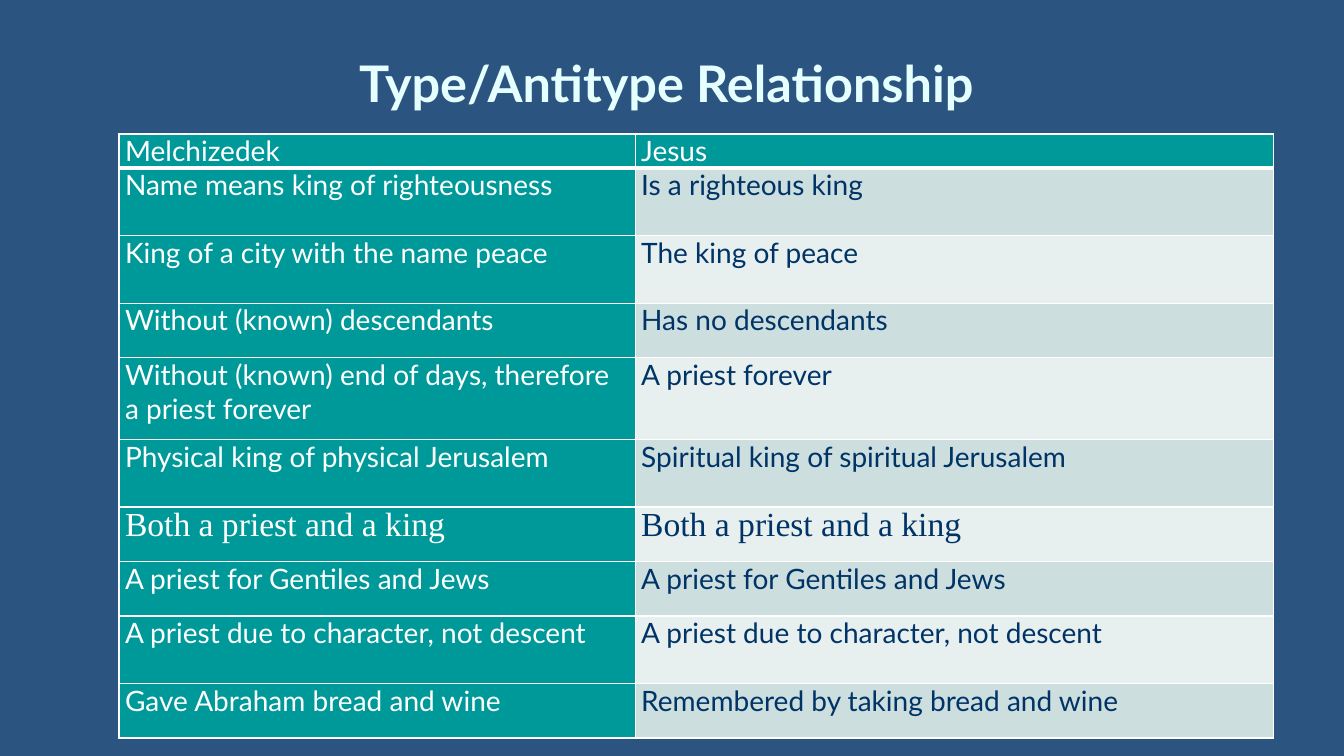
from lxml import etree
from pptx import Presentation
from pptx import util as u
from pptx.dml.color import RGBColor
from pptx.enum import text
from pptx.oxml.ns import qn

SLIDE_W, SLIDE_H = 13.33, 7.5
NAVY, ICE, WHITE = "2B5481", "E5FFFF", "FFFFFF"
TEAL, INK = "009999", "003366"
BANDS = ("CCDEDE", "E7EFEF")
COLUMN_WIDTHS = (5.12, 6.33)
SERIF = {"font": "Times New Roman", "size": 24}

# Melchizedek, Jesus, row height, text format
COMPARISONS = [
    ("Melchizedek", "Jesus", 0.33, {}),
    ("Name means king of righteousness", "Is a righteous king", 0.67, {}),
    ("King of a city with the name peace", "The king of peace", 0.67, {}),
    ("Without (known) descendants", "Has no descendants", 0.54, {}),
    ("Without (known) end of days, therefore a priest forever",
     "A priest forever", 0.81, {}),
    ("Physical king of physical Jerusalem",
     "Spiritual king of spiritual Jerusalem", 0.67, {}),
    ("Both a priest and a king", "Both a priest and a king", 0.54, SERIF),
    ("A priest for Gentiles and Jews", "A priest for Gentiles and Jews", 0.54, {}),
    ("A priest due to character, not descent",
     "A priest due to character, not descent", 0.67, {}),
    ("Gave Abraham bread and wine",
     "Remembered by taking bread and wine", 0.54, {}),
]


def paint(target, color):
    """Give a fill a solid colour."""
    target.solid()
    target.fore_color.rgb = RGBColor.from_string(color)


def write(frame, words, color, size=20, font="Lato", bold=False,
          align=text.PP_ALIGN.LEFT):
    paragraph = frame.paragraphs[0]
    paragraph.alignment = align
    run = paragraph.add_run()
    run.text = words
    run.font.name, run.font.size, run.font.bold = font, u.Pt(size), bold
    run.font.color.rgb = RGBColor.from_string(color)


def add_borders(cell, color, bottom):
    """Rule all four sides; lines must precede the fill in the cell XML."""
    properties = cell._tc.get_or_add_tcPr()
    sides = (("lnL", 1), ("lnR", 1), ("lnT", 1), ("lnB", bottom))
    for position, (side, width) in enumerate(sides):
        line = etree.Element(qn("a:" + side), w=str(u.Pt(width)))
        solid = etree.SubElement(line, qn("a:solidFill"))
        etree.SubElement(solid, qn("a:srgbClr"), val=color)
        properties.insert(position, line)


def place_title(slide, left, top, width, height):
    title = slide.shapes.title
    title.left, title.top = u.Inches(left), u.Inches(top)
    title.width, title.height = u.Inches(width), u.Inches(height)
    title.text_frame.vertical_anchor = text.MSO_ANCHOR.MIDDLE
    write(title.text_frame, "Type/Antitype Relationship ", ICE, size=36,
          bold=True, align=text.PP_ALIGN.CENTER)


def place_comparison(slide, left, top, width, height):
    table = slide.shapes.add_table(
        len(COMPARISONS), len(COLUMN_WIDTHS), u.Inches(left), u.Inches(top),
        u.Inches(width), u.Inches(height)).table
    table.horz_banding = False
    for column, share in zip(table.columns, COLUMN_WIDTHS):
        column.width = u.Inches(width * share / sum(COLUMN_WIDTHS))
    total = sum(entry[2] for entry in COMPARISONS)

    for r, (melchizedek, jesus, share, style) in enumerate(COMPARISONS):
        table.rows[r].height = u.Inches(height * share / total)
        for c, words in enumerate((melchizedek, jesus)):
            cell = table.cell(r, c)
            heading = r == 0 or c == 0
            cell.margin_left = cell.margin_right = u.Inches(0.06)
            cell.margin_top = cell.margin_bottom = 0
            paint(cell.fill, TEAL if heading else BANDS[(r - 1) % 2])
            add_borders(cell, WHITE, bottom=3 if r == 0 else 1)
            write(cell.text_frame, words, WHITE if heading else INK, **style)


def main():
    deck = Presentation()
    deck.slide_width, deck.slide_height = u.Inches(SLIDE_W), u.Inches(SLIDE_H)
    slide = deck.slides.add_slide(deck.slide_layouts[5])
    paint(slide.background.fill, NAVY)
    place_title(slide, 2.17, 0.3, 9, 1.03)
    place_comparison(slide, 1.18, 1.33, sum(COLUMN_WIDTHS), 5.99)
    deck.save("out.pptx")


if __name__ == "__main__":
    main()
